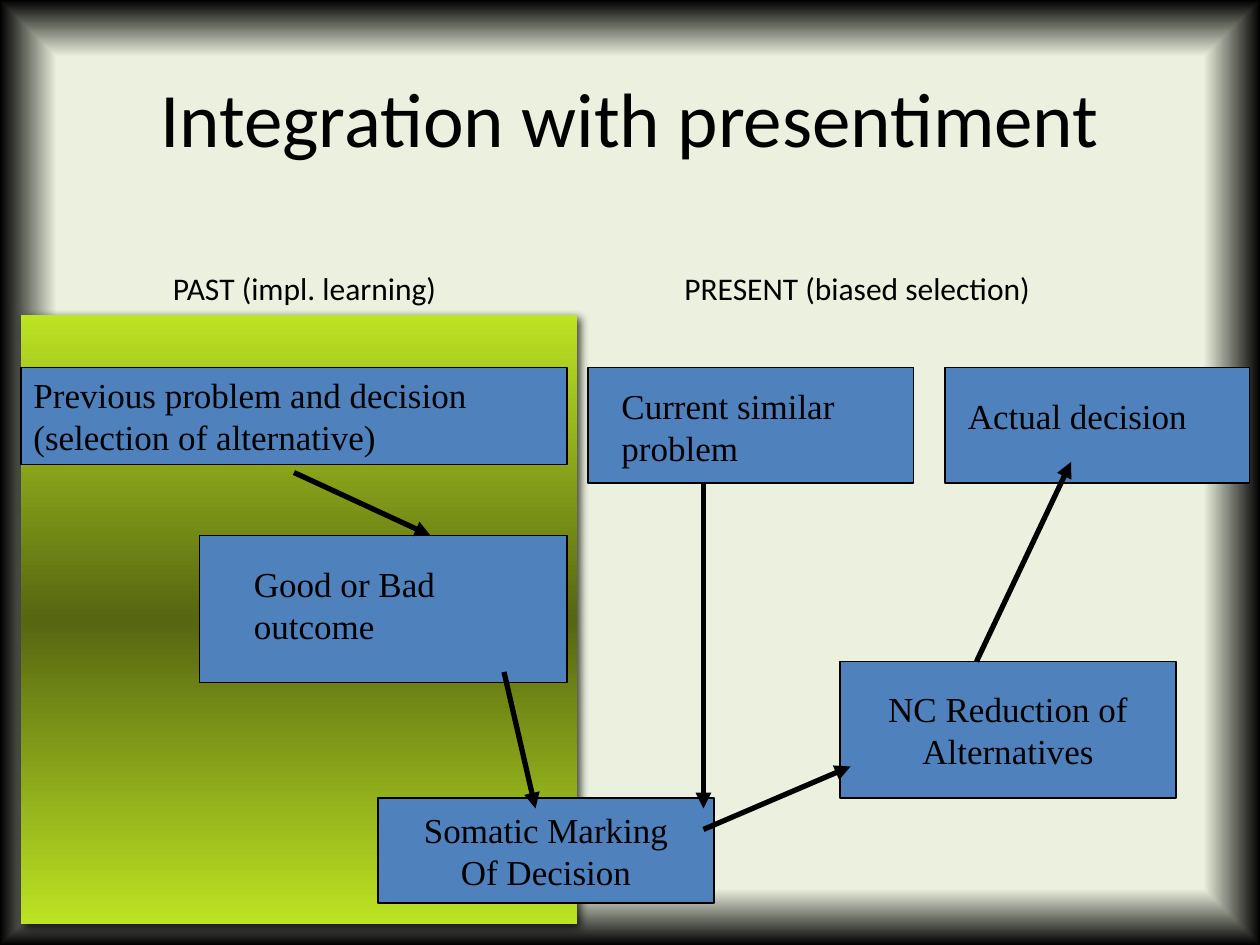
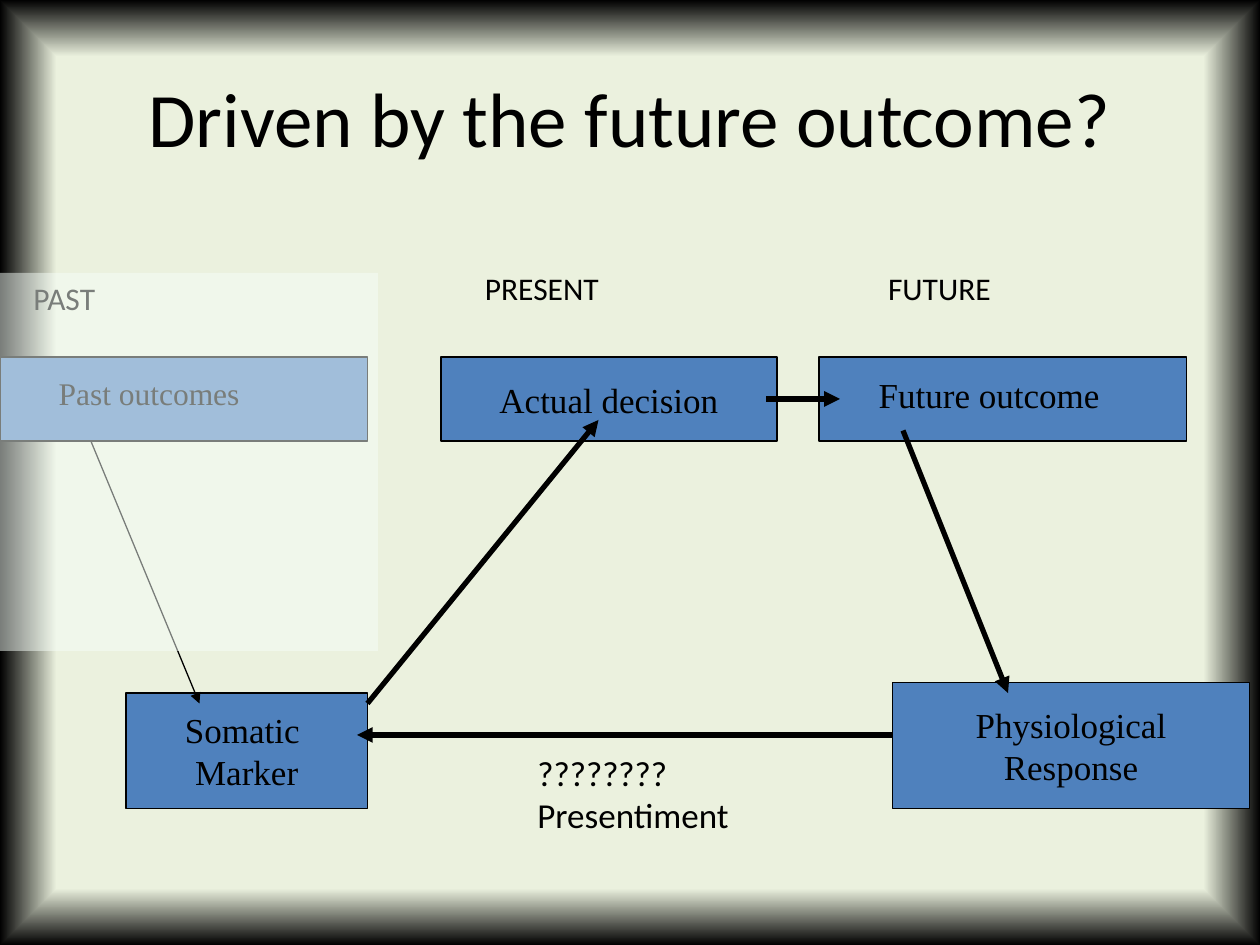
from dataclasses import dataclass
from pptx import Presentation
from pptx.dml.color import RGBColor as RGB
from pptx.enum.shapes import MSO_CONNECTOR as Link, MSO_SHAPE as Form
from pptx.enum.text import MSO_ANCHOR as Anchor, PP_ALIGN as Align
from pptx.oxml import parse_xml as to_xml
from pptx.oxml.ns import nsdecls, qn
from pptx.util import Inches, Pt


@dataclass(frozen=True)
class Theme:
    """Colours, fonts, type sizes and line widths of the deck."""
    ink: str = "000000"
    paper: str = "EBF1DE"
    box: str = "4F81BD"
    lime: str = "BDE323"
    olive: str = "566611"
    veil: str = "F7FFF9"
    sans: str = "Calibri"
    serif: str = "Times New Roman"
    title: int = 44
    body: int = 20
    head: int = 18
    thin: float = 0.75
    bold: float = 3


THEME = Theme()
COLS, ROWS = 120, 90
WIDE, HIGH = Inches(10), Inches(7.5)


def grid(*cells):
    """Turn alternating columns and rows into lengths."""
    units = (WIDE / COLS, HIGH / ROWS)
    return [round(cell * units[i % 2]) for i, cell in enumerate(cells)]


def apply(obj, vals):
    """Set each attribute named in a dict."""
    for name, val in vals.items():
        setattr(obj, name, val)


def node(tag, inner="", **attrs):
    """Make one drawing element."""
    words = "".join(f' {key}="{val}"' for key, val in attrs.items())
    return to_xml(f"<a:{tag} {nsdecls('a')}{words}>{inner}</a:{tag}>")


def blend(root, stops, mode):
    """Swap the first solid fill under root for a gradient."""
    marks = "".join(f'<a:gs pos="{pos * 1000}"><a:srgbClr val="{tone}"/></a:gs>'
                    for pos, tone in stops)
    old = next(root.iter(qn("a:solidFill")))
    new = node("gradFill", f"<a:gsLst>{marks}</a:gsLst>{mode}", rotWithShape=1)
    old.getparent().replace(old, new)


def write(frame, text, font, size, align=Align.LEFT, anchor=Anchor.TOP):
    """Fill a text frame, one paragraph a line."""
    apply(frame, {"text": text, "word_wrap": True, "vertical_anchor": anchor})
    for para in frame.paragraphs:
        para.alignment = align
        apply(para.font, {"name": font, "size": Pt(size)})
        para.font.color.rgb = RGB.from_string(THEME.ink)


def label(slide, cells, text, font=THEME.sans, size=THEME.head, **place):
    """Add a text box."""
    area = slide.shapes.add_textbox(*grid(*cells))
    write(area.text_frame, text, font, size, **place)


def note(slide, cells, text, size=THEME.body):
    """Add a serif caption over a box."""
    label(slide, cells, text, THEME.serif, size)


def block(slide, cells, fill):
    """Add a plain rectangle with neither line nor shadow."""
    rect = slide.shapes.add_shape(Form.RECTANGLE, *grid(*cells))
    rect.shadow.inherit = False
    rect.fill.solid()
    rect.fill.fore_color.rgb = RGB.from_string(fill)
    rect.line.fill.background()
    return rect


def trace(line, width):
    """Colour a line and set its width."""
    line.color.rgb = RGB.from_string(THEME.ink)
    line.width = Pt(width)


def box(slide, cells, text="", align=Align.CENTER, anchor=Anchor.MIDDLE):
    """Add an outlined step, with its text if any."""
    rect = block(slide, cells, THEME.box)
    trace(rect.line, THEME.thin)
    if text:
        write(rect.text_frame, text, THEME.serif, THEME.body, align, anchor)


def arrow(slide, ends, width=THEME.bold):
    """Add a straight arrow."""
    link = slide.shapes.add_connector(Link.STRAIGHT, *grid(*ends))
    trace(link.line, width)
    props = link.element.spPr
    props.find(qn("a:ln")).append(node("tailEnd", type="triangle"))
    props.append(node("effectLst"))


def panel(slide, cells):
    """Add the glossy panel with its soft shadow."""
    rect = block(slide, cells, THEME.lime)
    props = rect.element.spPr
    blend(props, [(0, THEME.lime), (50, THEME.olive), (100, THEME.lime)],
          '<a:lin ang="5400000" scaled="0"/>')
    tone = f'<a:srgbClr val="{THEME.ink}"><a:alpha val="75000"/></a:srgbClr>'
    props.find(qn("a:effectLst")).append(
        node("outerShdw", tone, blurRad=Pt(5), dist=Pt(3), dir=2700000,
             algn="tl", rotWithShape=0))


def veil(slide, cells):
    """Add a half clear sheet."""
    rect = block(slide, cells, THEME.veil)
    tone = next(rect.element.spPr.iter(qn("a:srgbClr")))
    tone.append(node("alpha", val=49000))


def page(deck, title):
    """Start a slide with the dark edge and its title."""
    slide = deck.slides.add_slide(deck.slide_layouts[6])
    slide.background.fill.solid()
    blend(slide.element, [(88, THEME.paper), (100, THEME.ink)],
          '<a:path path="rect"><a:fillToRect l="50000" t="50000" '
          'r="50000" b="50000"/></a:path>')
    label(slide, (6, 3.6, 108, 15), title, size=THEME.title,
          align=Align.CENTER, anchor=Anchor.MIDDLE)
    return slide


def merge(deck):
    """Build the slide that joins past and present."""
    slide = page(deck, "Integration with presentiment")
    panel(slide, (2, 30, 53, 58))
    box(slide, (2, 35, 52, 9.25),
        "Previous problem and decision (selection of alternative)",
        Align.LEFT, Anchor.TOP)
    box(slide, (19, 51, 35, 14))
    note(slide, (23, 53, 28, 9), "Good or Bad outcome")
    arrow(slide, (28, 45, 41, 51))
    box(slide, (56, 35, 31, 11))
    note(slide, (58, 36, 27, 9), "Current similar problem")
    box(slide, (36, 76, 32, 10), "Somatic Marking\nOf Decision")
    arrow(slide, (48, 64, 51, 77))
    arrow(slide, (67, 46, 67, 77))
    box(slide, (80, 63, 32, 13), "NC Reduction of\nAlternatives")
    arrow(slide, (67, 79, 81, 73))
    box(slide, (90, 35, 29, 11))
    arrow(slide, (93, 63, 102, 44))
    note(slide, (91, 37, 29, 5), "Actual decision")
    label(slide, (4, 25, 50, 6), "PAST (impl. learning)", align=Align.CENTER)
    label(slide, (64, 25, 54, 6), "PRESENT (biased selection)")


def ahead(deck):
    """Build the slide that leads back from the future."""
    slide = page(deck, "Driven by the future outcome?")
    box(slide, (42, 34, 32, 8), "Actual decision")
    box(slide, (78, 34, 35, 8))
    note(slide, (82.5, 35, 24, 5), "Future outcome")
    box(slide, (85, 65, 34, 12), "Physiological\nResponse")
    box(slide, (12, 66, 23, 11), "Somatic \nMarker")
    for ends in ((35, 67, 57, 40), (73, 38, 80, 38), (86, 41, 96, 66)):
        arrow(slide, ends)
    label(slide, (45, 25, 25, 6), "PRESENT")
    label(slide, (83.4, 25, 19, 6), "FUTURE")
    arrow(slide, (85, 70, 34, 70))
    label(slide, (50, 71, 23, 9), "????????\nPresentiment", size=THEME.body)
    arrow(slide, (7, 38, 19, 67), THEME.thin)
    box(slide, (0, 34, 35, 8))
    note(slide, (4.4, 35, 25, 6), "Past outcomes", THEME.head)
    label(slide, (2, 26, 13, 6), "PAST")
    veil(slide, (0, 26, 36, 36))


def main():
    """Build and save the deck."""
    deck = Presentation()
    apply(deck, {"slide_width": WIDE, "slide_height": HIGH})
    merge(deck)
    ahead(deck)
    deck.save("out.pptx")


if __name__ == "__main__":
    main()
